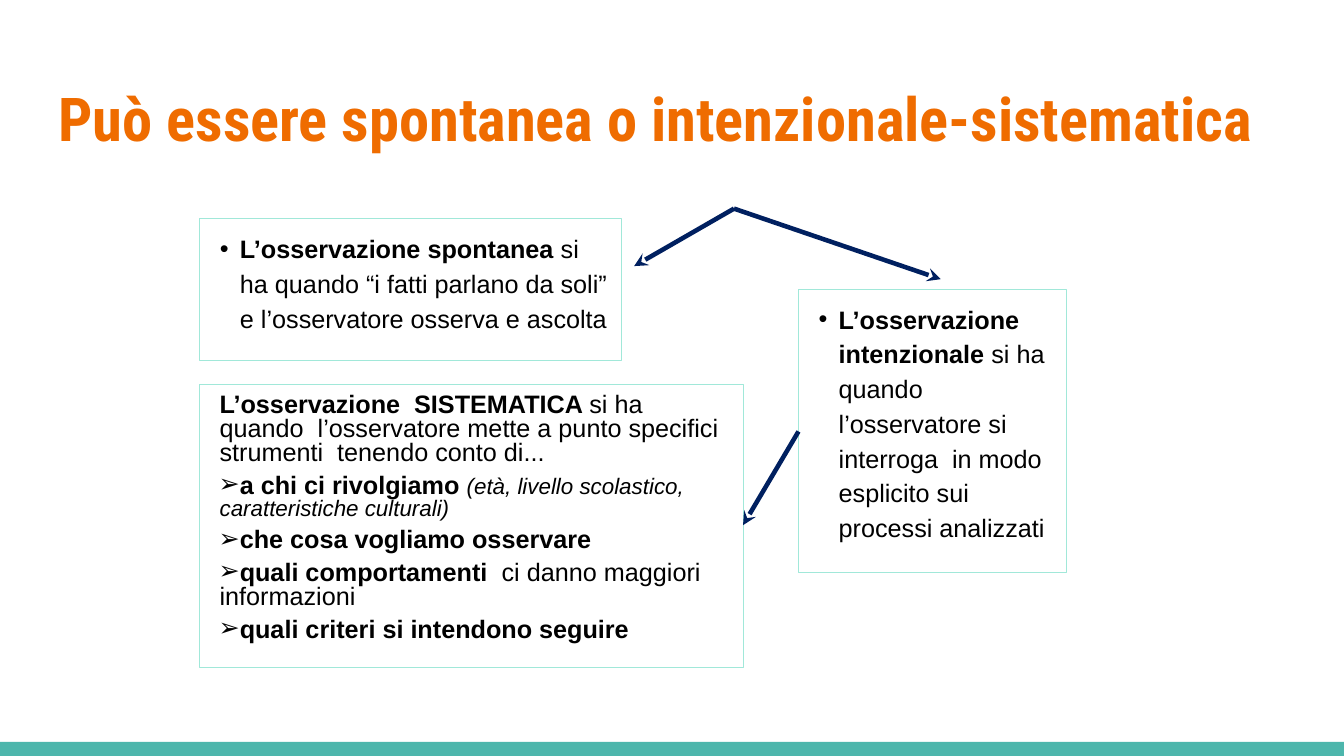
from lxml.etree import SubElement
from pptx import Presentation
from pptx.dml.color import RGBColor
from pptx.enum.shapes import MSO_CONNECTOR, MSO_SHAPE
from pptx.enum.text import MSO_ANCHOR, MSO_AUTO_SIZE, PP_ALIGN
from pptx.oxml.ns import qn
from pptx.util import Inches, Pt

ORANGE = RGBColor(0xEF, 0x6C, 0x00)
TEAL = RGBColor(0x4D, 0xB6, 0xAC)
MINT = RGBColor(0xA1, 0xE8, 0xD9)
NAVY = RGBColor(0x00, 0x20, 0x60)
BLACK = RGBColor(0x00, 0x00, 0x00)


def place(shape, left, top, width, height, inset):
    shape.left, shape.top = Inches(left), Inches(top)
    shape.width, shape.height = Inches(width), Inches(height)
    frame = shape.text_frame
    frame.word_wrap = True
    frame.auto_size = MSO_AUTO_SIZE.NONE
    frame.margin_left = frame.margin_right = Inches(inset)
    frame.margin_top = frame.margin_bottom = Inches(inset)


def write(paragraph, runs, spacing, before, margin, indent, bullet):
    paragraph.alignment = PP_ALIGN.LEFT
    paragraph.line_spacing = spacing
    paragraph.space_before = Pt(before)
    props = paragraph._p.get_or_add_pPr()
    props.set("marL", str(Inches(margin)))
    props.set("indent", str(Inches(indent)))
    if bullet:
        colour = SubElement(props, qn("a:buClr"))
        SubElement(colour, qn("a:srgbClr"), val=str(BLACK))
        SubElement(props, qn("a:buFont"), typeface="Arial")
        SubElement(props, qn("a:buChar"), char=bullet)
    else:
        SubElement(props, qn("a:buNone"))
    paragraph.font.name = "Arial"
    paragraph.font.size = Pt(18)
    paragraph.font.color.rgb = BLACK
    for words, style in runs:
        run = paragraph.add_run()
        run.text = words
        run.font.bold = style == "bold"
        if style == "italic":
            run.font.italic = True
            run.font.size = Pt(16)


presentation = Presentation()
presentation.slide_width = Inches(13.33)
presentation.slide_height = Inches(7.5)
slide = presentation.slides.add_slide(presentation.slide_layouts[1])

# Bottom band
band = slide.shapes.add_shape(
    MSO_SHAPE.RECTANGLE, 0, Inches(7.36), Inches(13.33), Inches(0.14))
band.shadow.inherit = False
band.fill.solid()
band.fill.fore_color.rgb = TEAL
band.line.fill.background()

# Title
title = slide.shapes.title
place(title, 0.45, 0.65, 12.42, 1.03, 0.13)
title.text_frame.vertical_anchor = MSO_ANCHOR.MIDDLE
heading = title.text_frame.paragraphs[0]
heading.text = "Può essere spontanea o intenzionale-sistematica"
heading.alignment = PP_ALIGN.LEFT
heading.font.name = "Roboto Condensed"
heading.font.size = Pt(43.2)
heading.font.bold = True
heading.font.color.rgb = ORANGE

# Three framed kinds of observation
spontaneous = slide.placeholders[1]
intentional, systematic = [
    slide.shapes.add_shape(MSO_SHAPE.RECTANGLE, 0, 0, 0, 0) for _ in range(2)]
for kind, area in [
    (spontaneous, (1.98, 2.17, 4.18, 1.41)),
    (intentional, (7.92, 2.87, 2.66, 2.81)),
    (systematic, (1.98, 3.81, 5.39, 2.81)),
]:
    place(kind, *area, 0.1)
    kind.text_frame.vertical_anchor = MSO_ANCHOR.TOP
    kind.fill.background()
    kind.line.color.rgb = MINT
    kind.line.width = Pt(0.75)
for kind in (intentional, systematic):
    kind.shadow.inherit = False

# Spontaneous and intentional definitions
for kind, term, definition in [
    (spontaneous, "L’osservazione spontanea ",
     "si ha quando “i fatti parlano da soli” e l’osservatore osserva e ascolta"),
    (intentional, "L’osservazione  intenzionale ",
     "si ha quando  l’osservatore si interroga  in modo esplicito sui processi analizzati"),
]:
    write(kind.text_frame.paragraphs[0], [(term, "bold"), (definition, "plain")],
          1.15, 0, 0.3, -0.2, "•")

# Systematic definition and its criteria
write(systematic.text_frame.paragraphs[0],
      [("L’osservazione  SISTEMATICA ", "bold"),
       ("si ha quando  l’osservatore mette a punto specifici strumenti  tenendo conto di...",
        "plain")],
      0.8, 0, 0.1, 0, None)
for criterion in [
    [("a chi ci rivolgiamo ", "bold"),
     ("(età, livello scolastico, caratteristiche culturali)", "italic")],
    [("che cosa vogliamo osservare", "bold")],
    [("quali comportamenti", "bold"), ("  ci danno maggiori informazioni", "plain")],
    [("quali criteri si intendono seguire", "bold")],
]:
    write(systematic.text_frame.add_paragraph(), criterion, 0.8, 6, 0.1, -0.01, "➢")

# Arrows from the title to both kinds, and on to the systematic one
for start, end in [
    ((7.28, 2.07), (9.33, 2.77)),
    ((7.28, 2.07), (6.29, 2.64)),
    ((7.92, 4.28), (7.37, 5.21)),
]:
    arrow = slide.shapes.add_connector(
        MSO_CONNECTOR.STRAIGHT, *map(Inches, start + end))
    arrow.line.color.rgb = NAVY
    arrow.line.width = Pt(3.25)
    SubElement(arrow.line._get_or_add_ln(), qn("a:tailEnd"), type="stealth")
    SubElement(arrow._element.spPr, qn("a:effectLst"))

presentation.save("out.pptx")
